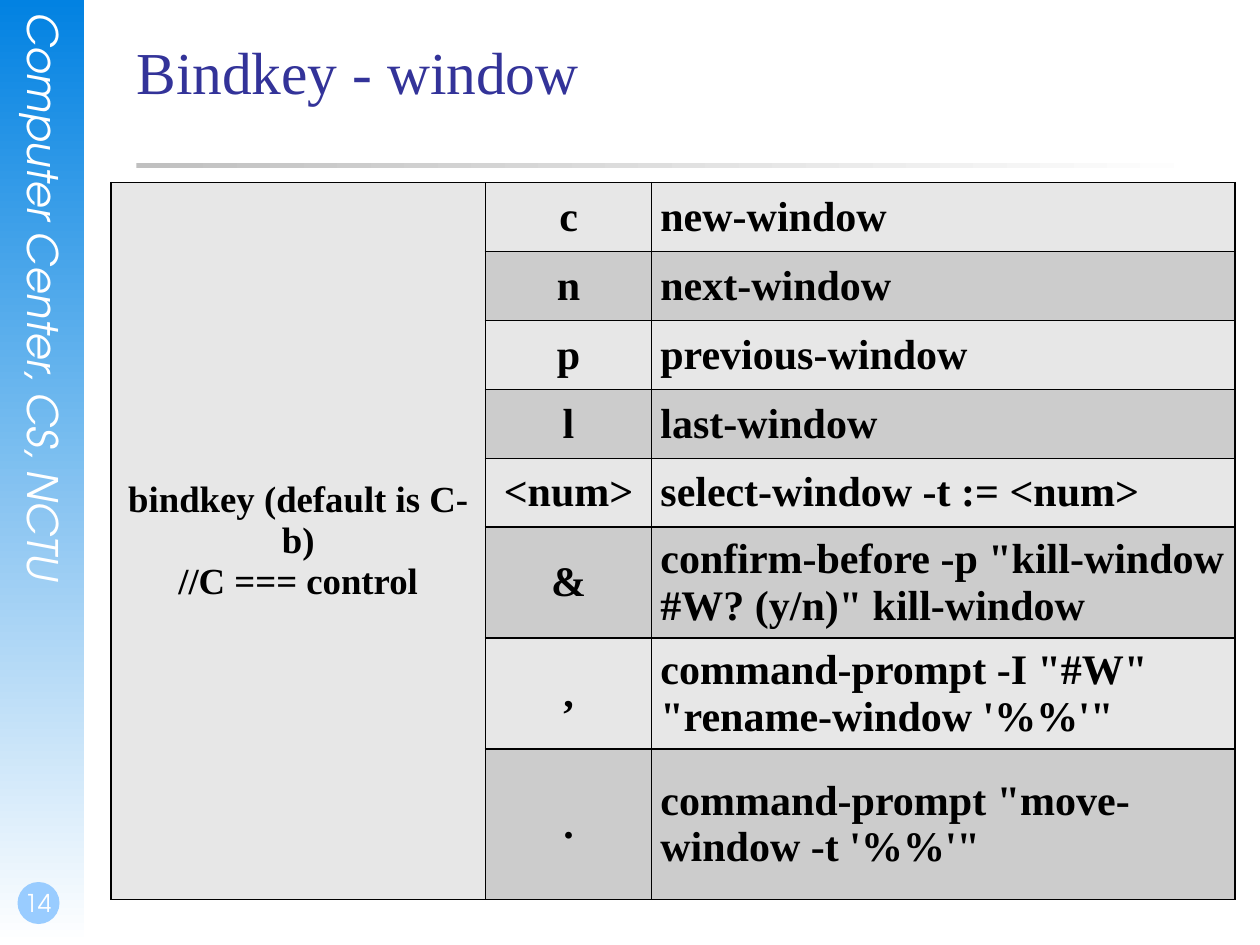
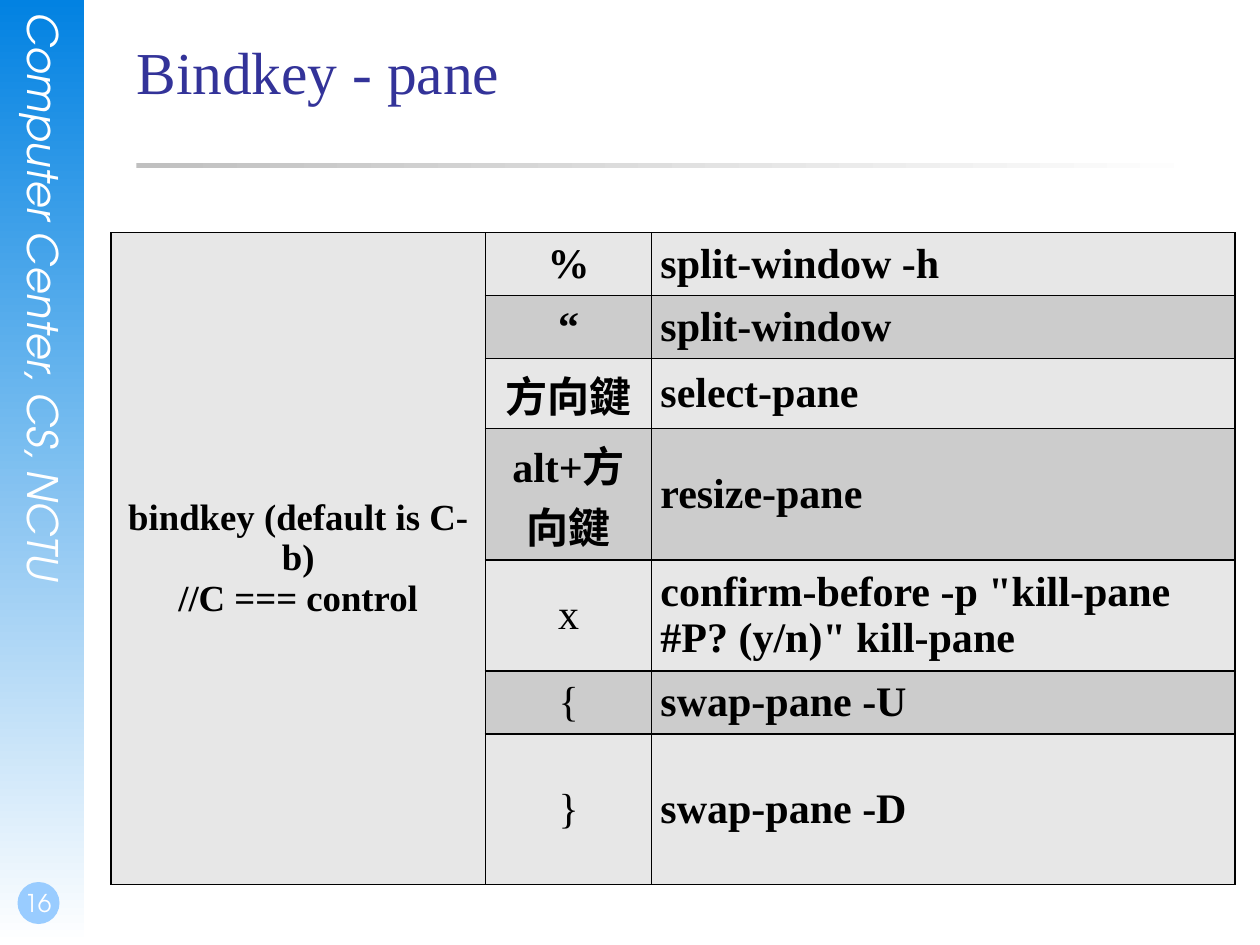
from lxml import etree
from pptx import Presentation
from pptx.dml.color import RGBColor
from pptx.enum import shapes as sh, text as tx
from pptx.oxml import ns
from pptx.util import Pt

SERIF, SANS = "Times New Roman", "TeX Gyre Adventor"
WHITE, BLACK = "FFFFFF", "000000"
SKY, BALL, INK, GREY = "0282E2", "99CCFF", "333399", "C0C0C0"
BANDS = ["E7E7E7", "CCCCCC"]
MID, LEFT = tx.PP_ALIGN.CENTER, tx.PP_ALIGN.LEFT
TITLE = dict(name=SERIF, size=Pt(34))
SIDE = dict(name=SANS, size=Pt(24), italic=True)
PAGE = dict(name=SANS, size=Pt(14))
LEAD = dict(name=SERIF, size=Pt(21), bold=True)
CELL = dict(LEAD, size=Pt(24))
THIN = dict(CELL, bold=False)
COLS = [214, 95, 333.4]
PREFIX = "bindkey (default is C-b)\n//C === control"

WINDOW = [
    ("c", "new-window"),
    ("n", "next-window"),
    ("p", "previous-window"),
    ("l", "last-window"),
    ("<num>", "select-window -t := <num>"),
    ("&", 'confirm-before -p "kill-window #W? (y/n)" kill-window'),
    (",", "command-prompt -I \"#W\" \"rename-window '%%'\""),
    (".", "command-prompt \"move-window -t '%%'\""),
]
PANE = [
    ("%", "split-window -h"),
    ("“", "split-window"),
    ("方向鍵", "select-pane"),
    ("alt+方向鍵", "resize-pane"),
    ("x", 'confirm-before -p "kill-pane #P? (y/n)" kill-pane'),
    ("{", "swap-pane -U"),
    ("}", "swap-pane -D"),
]


def color(code):
    return RGBColor.from_string(code)


def apply(item, props):
    for key, value in props.items():
        setattr(item, key, value)


def pad(item, left, top, right, bottom):
    apply(item, dict(margin_left=Pt(left), margin_top=Pt(top),
                     margin_right=Pt(right), margin_bottom=Pt(bottom)))


def write(frame, words, font, code, align=LEFT):
    frame.text = words
    for para in frame.paragraphs:
        para.alignment = align
        for run in para.runs:
            apply(run.font, font)
            run.font.color.rgb = color(code)


def shape(slide, kind, box, fill, angle=None):
    item = slide.shapes.add_shape(kind, *map(Pt, box))
    item.shadow.inherit = False
    item.line.fill.background()
    if angle is None:
        item.fill.solid()
        item.fill.fore_color.rgb = color(fill)
        return
    item.fill.gradient()
    item.fill.gradient_angle = angle
    for stop, code in zip(item.fill.gradient_stops, [fill, WHITE]):
        stop.color.rgb = color(code)


def label(slide, box, words, font, align, wrap=True):
    frame = slide.shapes.add_textbox(*map(Pt, box)).text_frame
    frame.word_wrap = wrap
    pad(frame, 0, 0, 0, 0)
    write(frame, words, font, WHITE, align)
    return frame


def sidebar(slide, box, page):
    x, y, w, h = box
    shape(slide, sh.MSO_SHAPE.RECTANGLE, box, SKY, 270)
    name = label(slide, (x + 11, y + 7, 29, 368),
                 "Computer Center, CS, NCTU", SIDE, LEFT)
    name._txBody.bodyPr.set("vert", "eaVert")
    shape(slide, sh.MSO_SHAPE.OVAL, (x + 10, y + h - 36, 24, 24), BALL)
    num = label(slide, (x, y + h - 48, w - 6, 36), str(page), PAGE, MID)
    pad(num, 1.5, 0, 0, 3.6)
    num.vertical_anchor = tx.MSO_ANCHOR.BOTTOM


def header(slide, box, words):
    x, y, w, h = box
    shape(slide, sh.MSO_SHAPE.RECTANGLE, (x, y + 73, w, 3), GREY, 0)
    title = slide.shapes.title
    apply(title, dict(zip(("left", "top", "width", "height"), map(Pt, box))))
    frame = title.text_frame
    apply(frame, dict(auto_size=tx.MSO_AUTO_SIZE.NONE, word_wrap=True,
                      vertical_anchor=tx.MSO_ANCHOR.TOP))
    pad(frame, 0, 0, 0, 0)
    write(frame, words, TITLE, INK)


def border(cell):
    props = cell._tc.get_or_add_tcPr()
    for side in ("a:lnL", "a:lnR", "a:lnT", "a:lnB"):
        line = etree.SubElement(props, ns.qn(side), w=str(Pt(1)))
        fill = etree.SubElement(line, ns.qn("a:solidFill"))
        etree.SubElement(fill, ns.qn("a:srgbClr"), val=BLACK)


def grid(slide, box, keys, rows, thin):
    frame = slide.shapes.add_table(len(keys), len(COLS), *map(Pt, box))
    table = frame.table
    apply(table, dict(first_row=False, horz_banding=False))
    for col, width in zip(table.columns, COLS):
        col.width = Pt(width)
    for i, (key, command) in enumerate(keys):
        table.rows[i].height = Pt(rows[i])
        font = THIN if key in thin else CELL
        parts = [("" if i else PREFIX, LEAD, MID),
                 (key, font, MID), (command, CELL, LEFT)]
        for j, (words, style, align) in enumerate(parts):
            cell = table.cell(i, j)
            border(cell)
            cell.fill.solid()
            cell.fill.fore_color.rgb = color(BANDS[i % 2 if j else 0])
            cell.vertical_anchor = tx.MSO_ANCHOR.MIDDLE
            pad(cell, 5, 2.9, 5, 2.9)
            if words:
                write(cell.text_frame, words, style, BLACK, align)
    table.cell(0, 0).merge(table.cell(len(keys) - 1, 0))


def build(deck, page, title, top, keys, rows, thin=""):
    slide = deck.slides.add_slide(deck.slide_layouts[5])
    sidebar(slide, (0, 0, 48, 540), page)
    header(slide, (78, 20, 612, 90), title)
    grid(slide, (63.4, top, sum(COLS), sum(rows)), keys, rows, thin)


def main():
    deck = Presentation()
    apply(deck, dict(slide_width=Pt(720), slide_height=Pt(540)))
    build(deck, 14, "Bindkey - window", 104.4, WINDOW,
          [39.4] * 5 + [60.6] * 2 + [86])
    build(deck, 16, "Bindkey - pane", 133, PANE,
          [36, 36, 40, 75, 58, 36, 86], "x{}")
    deck.save("out.pptx")


if __name__ == "__main__":
    main()
